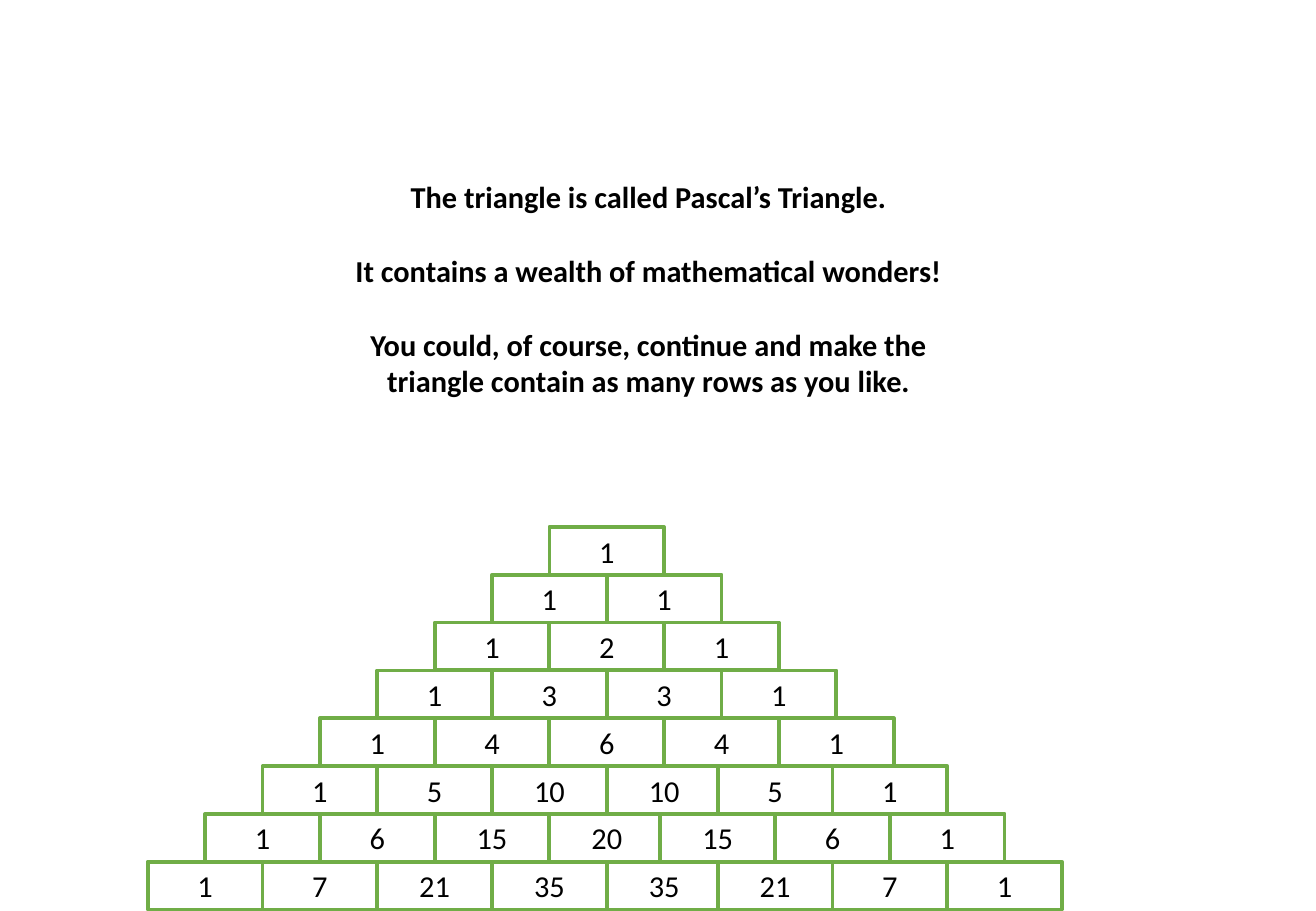
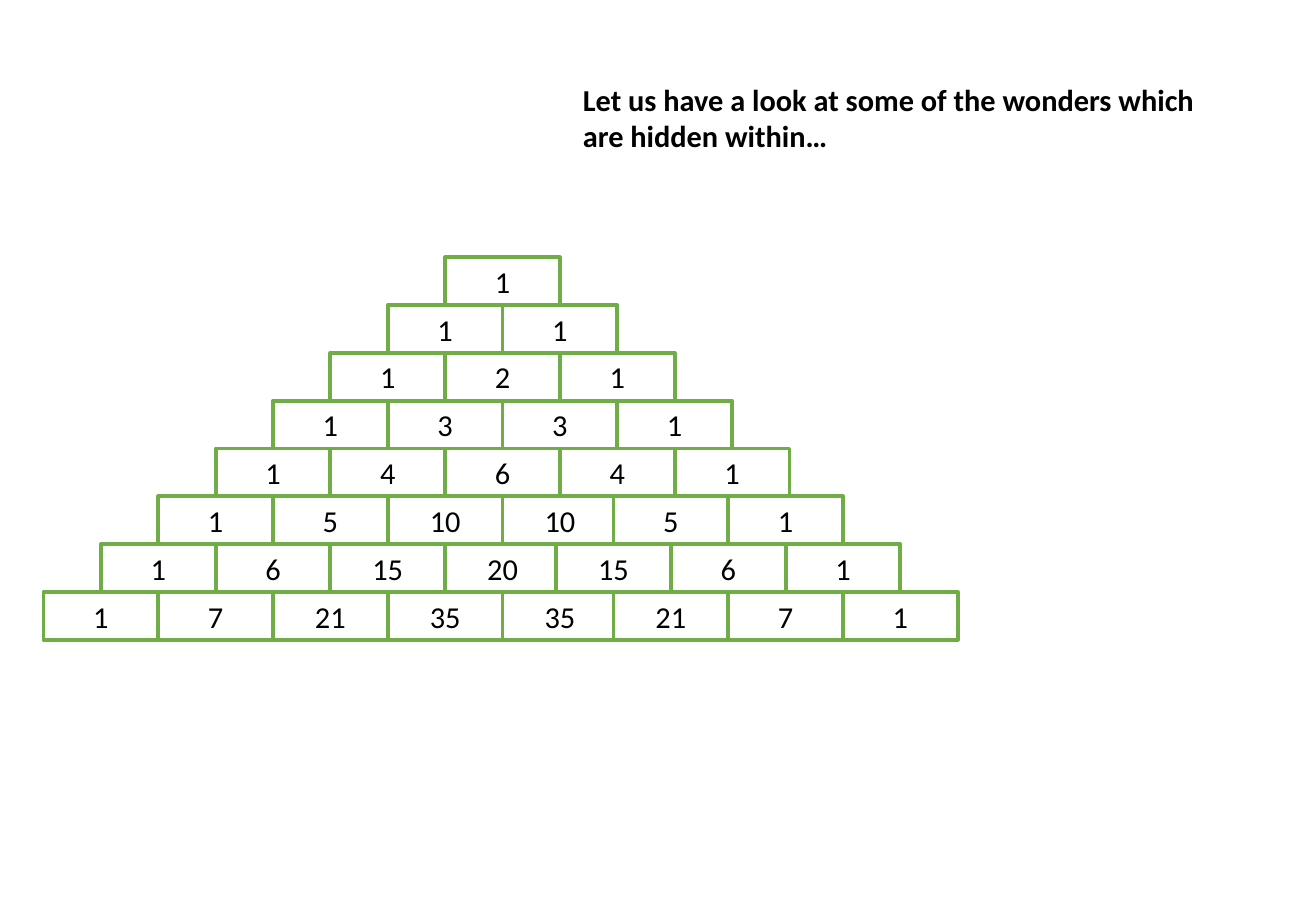
from math import comb

from pptx import Presentation
from pptx.dml.color import RGBColor
from pptx.enum.shapes import MSO_SHAPE
from pptx.enum.text import MSO_ANCHOR, PP_ALIGN
from pptx.util import Cm, Pt

GREEN = RGBColor(0x70, 0xAD, 0x47)
WHITE = RGBColor(0xFF, 0xFF, 0xFF)
BLACK = RGBColor(0x00, 0x00, 0x00)
FONT = "Calibri"
TEXT_SIZE = Pt(18)
PARAGRAPH_GAP = Pt(22)

# Triangle measures, in centimetres
ROWS = 8
BRICK_WIDTH, BRICK_HEIGHT = 2.4, 1.0
FIRST_LONG_ROW = 5
RIGHT_OVERLAP = 0.08  # right-hand bricks of the long rows sit closer in


def add_run(para, text, bold=False):
    span = para.add_run()
    span.text = text
    span.font.name = FONT
    span.font.size = TEXT_SIZE
    span.font.bold = bold
    span.font.color.rgb = BLACK


def add_brick(page, left, top, number):
    brick = page.shapes.add_shape(
        MSO_SHAPE.RECTANGLE, Cm(left), Cm(top), Cm(BRICK_WIDTH), Cm(BRICK_HEIGHT))
    brick.shadow.inherit = False
    brick.fill.solid()
    brick.fill.fore_color.rgb = WHITE
    brick.line.color.rgb = GREEN
    brick.line.width = Pt(2.25)
    brick.text_frame.vertical_anchor = MSO_ANCHOR.MIDDLE
    para = brick.text_frame.paragraphs[0]
    para.alignment = PP_ALIGN.CENTER
    add_run(para, str(number))


def add_triangle(page, apex_left, top):
    """Pascal's triangle, hung from the top left corner of its apex brick."""
    for row in range(ROWS):
        for column in range(row + 1):
            steps = column - row / 2
            left = apex_left + steps * BRICK_WIDTH
            if row >= FIRST_LONG_ROW and steps >= 1:
                left -= RIGHT_OVERLAP
            add_brick(page, left, top + row * BRICK_HEIGHT, comb(row, column))


def add_message(page, left, top, width, height, lines, alignment):
    box = page.shapes.add_textbox(Cm(left), Cm(top), Cm(width), Cm(height))
    frame = box.text_frame
    frame.word_wrap = True
    for index, line in enumerate(lines):
        para = frame.add_paragraph() if index else frame.paragraphs[0]
        para.alignment = alignment
        if index:
            para.space_before = PARAGRAPH_GAP
        add_run(para, line, bold=True)


def main():
    deck = Presentation()
    deck.slide_width, deck.slide_height = Cm(27.52), Cm(19.05)
    blank = deck.slide_layouts[6]

    # The triangle gets its name
    page = deck.slides.add_slide(blank)
    add_triangle(page, 11.49, 11.02)
    add_message(page, 6.68, 3.61, 13.77, 4.88, [
        "The triangle is called Pascal’s Triangle.",
        "It contains a wealth of mathematical wonders!",
        "You could, of course, continue and make the triangle contain "
        "as many rows as you like.",
    ], PP_ALIGN.CENTER)

    # Invitation to look closer
    page = deck.slides.add_slide(blank)
    add_triangle(page, 9.31, 5.38)
    add_message(page, 11.94, 1.57, 13.77, 1.8, [
        "Let us have a look at some of the wonders which are hidden within…",
    ], PP_ALIGN.LEFT)

    deck.save("out.pptx")


if __name__ == "__main__":
    main()
